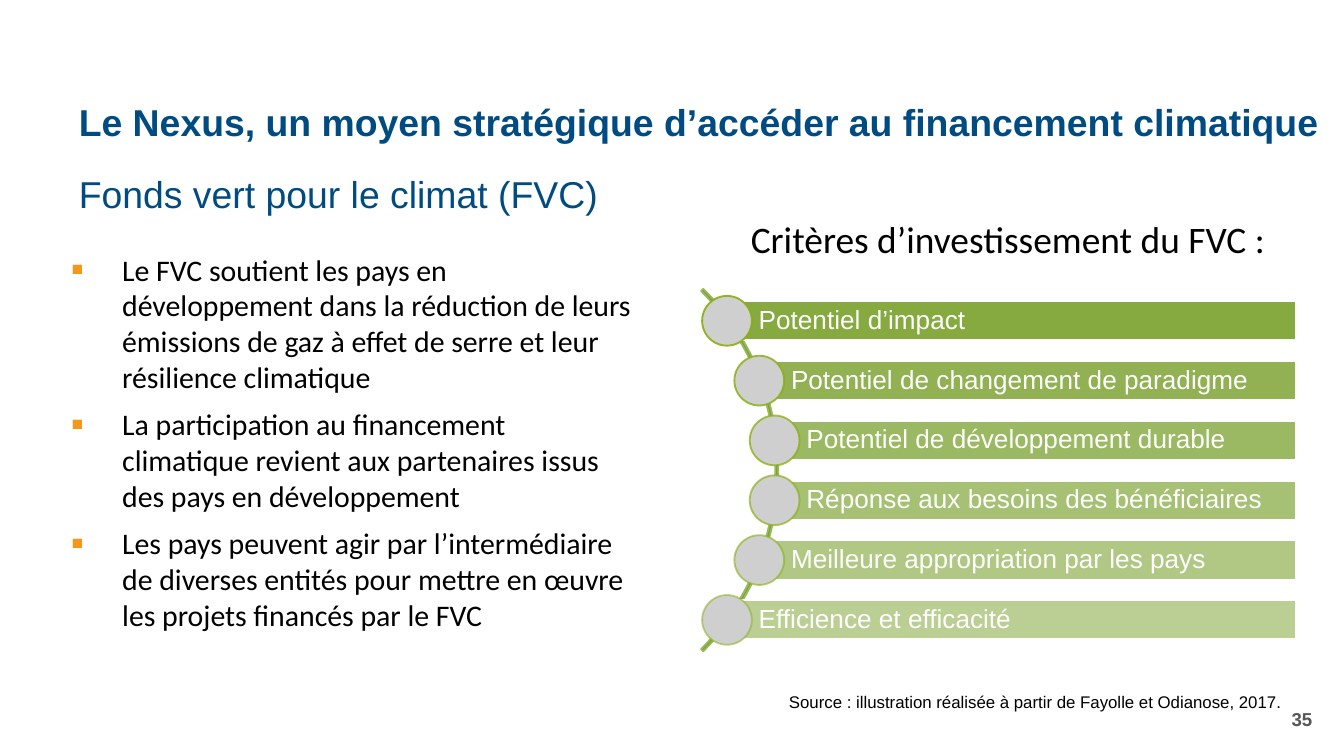
import pptx
import pptx.util
import pptx.dml.color
import pptx.enum.shapes
import pptx.enum.text
import pptx.oxml.ns
import lxml.etree

Cm, Pt = pptx.util.Cm, pptx.util.Pt
Shape = pptx.enum.shapes.MSO_SHAPE
Anchor = pptx.enum.text.MSO_ANCHOR
Align = pptx.enum.text.PP_ALIGN
qn = pptx.oxml.ns.qn

TITLE = "Le Nexus, un moyen stratégique d’accéder au financement climatique"
HEAD = "Fonds vert pour le climat (FVC)"
POINTS = [
    "Le FVC soutient les pays en développement dans la réduction de leurs émissions de gaz à effet de serre et leur résilience climatique",
    "La participation au financement climatique revient aux partenaires issus des pays en développement",
    "Les pays peuvent agir par l’intermédiaire de diverses entités pour mettre en œuvre les projets financés par le FVC",
]
LABEL = "Critères d’investissement du FVC\u00a0:"
SOURCE = "Source\u00a0: illustration réalisée à partir de Fayolle et Odianose, 2017."
PAGE = "35"
GOALS = [
    ("Potentiel d’impact", 13.74),
    ("Potentiel de changement de paradigme", 14.35),
    ("Potentiel de développement durable", 14.64),
    ("Réponse aux besoins des bénéficiaires", 14.64),
    ("Meilleure appropriation par les pays", 14.35),
    ("Efficience et efficacité", 13.74),
]
BLUE, GREEN, ORANGE = "004C82", "79A12C", "F4971A"
RIGHT, FIRST, STEP = 24.5, 6.06, 1.13
TALL, DOT = 0.74, 0.94


def paint(form, tint, alpha=100):
    form.solid()
    form.fore_color.rgb = pptx.dml.color.RGBColor.from_string(tint)
    if alpha < 100:
        node = form.fore_color._xFill.find(qn("a:srgbClr"))
        lxml.etree.SubElement(node, qn("a:alpha"), val=str(alpha * 1000))


def style(para, size, face, tint, bold=False):
    for run in para.runs:
        run.font.size = Pt(size)
        run.font.name = face
        run.font.bold = bold
        paint(run.font.fill, tint)


def inset(frame, left, top, right, bottom):
    frame.margin_left, frame.margin_top = Cm(left), Cm(top)
    frame.margin_right, frame.margin_bottom = Cm(right), Cm(bottom)


def write(place, text, size, face, tint, bold=False, anchor=Anchor.TOP,
          align=Align.LEFT, space=1.0):
    frame = slide.shapes.add_textbox(*map(Cm, place)).text_frame
    frame.word_wrap = True
    frame.vertical_anchor = anchor
    frame.text = text
    for para in frame.paragraphs:
        para.alignment = align
        para.line_spacing = space
        style(para, size, face, tint, bold)
    return frame


def draw(kind, place, fill, line, alpha=100, edge=100):
    shape = slide.shapes.add_shape(kind, *map(Cm, place))
    shape.shadow.inherit = False
    paint(shape.fill, fill, alpha)
    paint(shape.line.fill, line, edge)
    shape.line.width = Pt(1)
    return shape


def bullet(para):
    props = para._p.get_or_add_pPr()
    props.set("marL", str(Cm(1.7)))
    props.set("indent", str(Cm(-0.97)))
    tint = lxml.etree.SubElement(props, qn("a:buClr"))
    lxml.etree.SubElement(tint, qn("a:srgbClr"), val=ORANGE)
    lxml.etree.SubElement(props, qn("a:buSzPct"), val="125000")
    lxml.etree.SubElement(props, qn("a:buFont"), typeface="Arial")
    lxml.etree.SubElement(props, qn("a:buChar"), char="▪")


deck = pptx.Presentation()
deck.slide_width, deck.slide_height = Cm(25.4), Cm(14.28)
slide = deck.slides.add_slide(deck.slide_layouts[6])

write((1.24, 1.6, 24.16, 1.5), TITLE, 20, "Arial", BLUE, True, Anchor.MIDDLE, space=0.9)
head = write((1.24, 3.33, 23.8, 0.76), HEAD, 20, "Arial", BLUE, space=0.9)
inset(head, 0.25, 0, 0.2, 0)

body = write((0.36, 4.62, 11.89, 9.35), "\n".join(POINTS), 16, "Calibri", "000000")
for rank, para in enumerate(body.paragraphs):
    bullet(para)
    if rank:
        para.space_before = Pt(6)

arc = draw(Shape.BLOCK_ARC, (5.03, 4.04, 9.68, 9.68), GREEN, "9AB85E")
for rank, value in enumerate((189, 27, 0.006)):
    arc.adjustments[rank] = value

for rank, (goal, left) in enumerate(GOALS):
    mid = FIRST + rank * STEP
    alpha = 90 - 8 * rank
    bar = draw(Shape.RECTANGLE, (left, mid - TALL / 2, RIGHT - left, TALL),
               GREEN, "FFFFFF", alpha)
    frame = bar.text_frame
    frame.word_wrap = True
    frame.vertical_anchor = Anchor.MIDDLE
    inset(frame, 0.6, 0.09, 0.09, 0.09)
    frame.text = goal
    para = frame.paragraphs[0]
    para.alignment = Align.LEFT
    para.line_spacing = 0.9
    style(para, 14, "Arial", "FFFFFF")
    draw(Shape.OVAL, (left - DOT / 2, mid - DOT / 2, DOT, DOT),
         "CFCFCF", "89AE10", edge=alpha)

write((13.94, 4.06, 11.46, 1.2), LABEL, 20, "Calibri", "000000", space=0.9)
write((14.66, 12.95, 9.93, 0.64), SOURCE, 9, "Arial", "000000")
write((19.33, 13.21, 5.72, 0.76), PAGE, 10, "Arial", "575756", True,
      Anchor.MIDDLE, Align.RIGHT)

deck.save("out.pptx")
